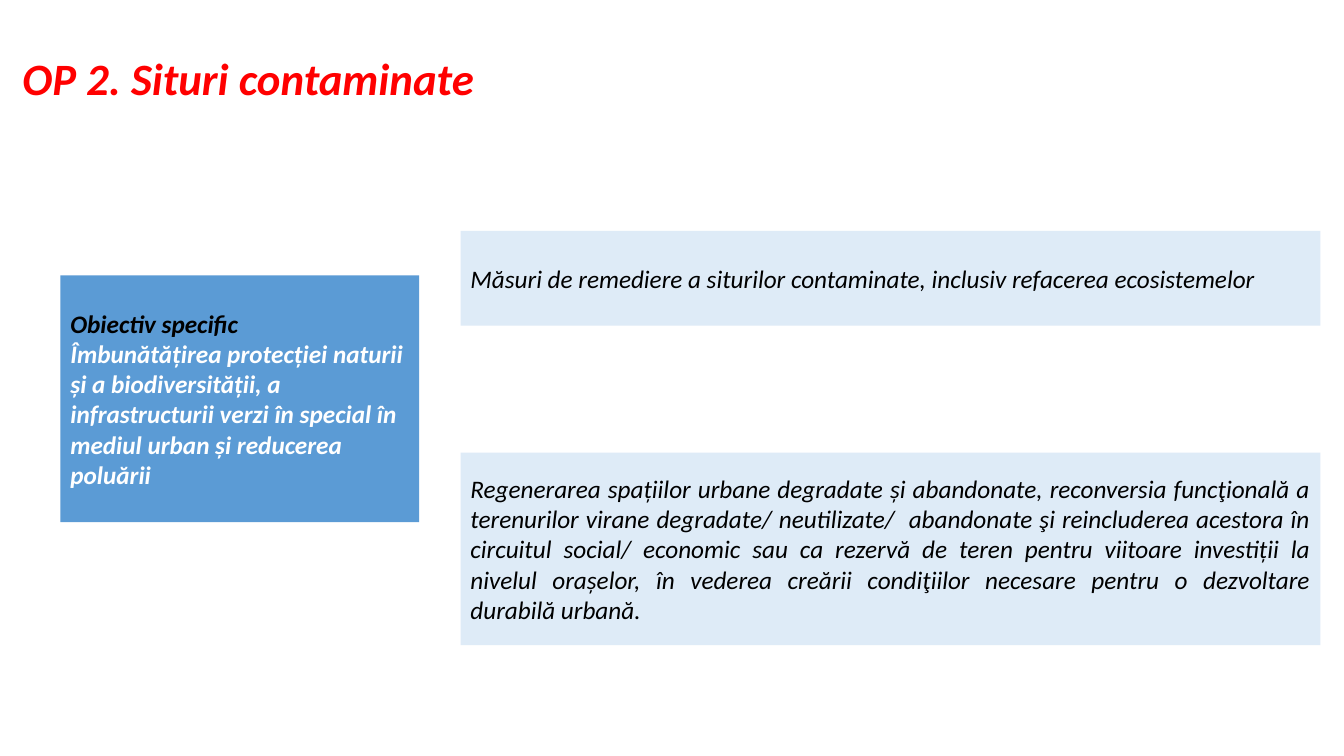
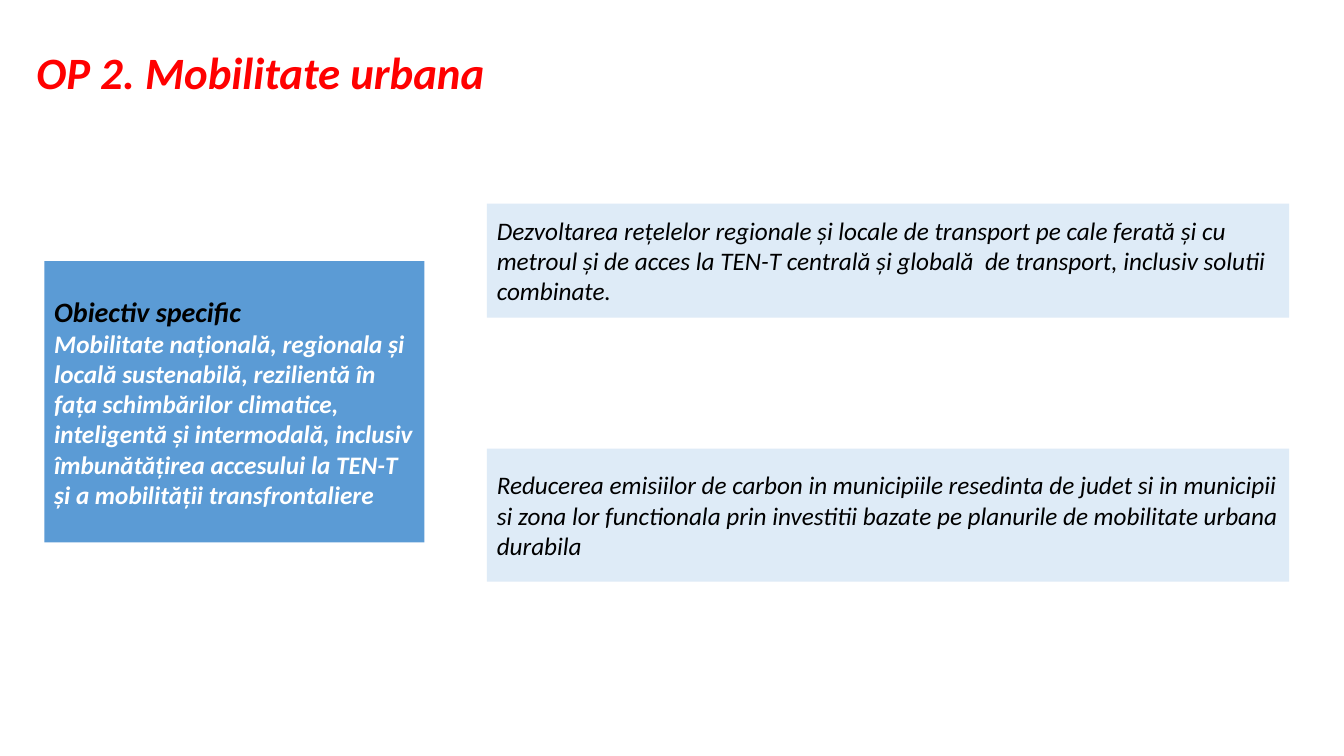
"""Build two slides that pair a specific objective with its measures."""
from pptx import Presentation
from pptx.dml.color import RGBColor
from pptx.enum.shapes import MSO_SHAPE
from pptx.enum.text import MSO_ANCHOR, PP_ALIGN
from pptx.util import Pt

RECT = MSO_SHAPE.RECTANGLE
TOP, MIDDLE = MSO_ANCHOR.TOP, MSO_ANCHOR.MIDDLE
LEFT, JUSTIFY = PP_ALIGN.LEFT, PP_ALIGN.JUSTIFY
FONT = "Calibri"
INSET = 7.2
COLORS = {"title": "FF0000", "goal": "5B9BD5", "measure": "DEEBF7",
          "dark": "000000", "light": "FFFFFF"}


def color(name):
    return RGBColor.from_string(COLORS[name])


def write(para, text, size=18, ink="dark", bold=False, align=LEFT, space=1.0):
    para.alignment = align
    para.line_spacing = space
    run = para.add_run()
    run.text = text
    font = run.font
    font.name, font.size = FONT, Pt(size)
    font.bold, font.italic = bold, True
    font.color.rgb = color(ink)


def set_frame(shape, inset, anchor):
    frame = shape.text_frame
    frame.word_wrap = True
    frame.vertical_anchor = anchor
    frame.margin_left = frame.margin_right = Pt(inset)
    frame.margin_top = frame.margin_bottom = Pt(inset)
    return frame


def add_title(slide, text, left, top):
    box = slide.shapes.add_textbox(Pt(left), Pt(top), Pt(920), Pt(63.4))
    frame = set_frame(box, 0, TOP)
    write(frame.paragraphs[0], text, size=32, ink="title", bold=True, space=0.9)


def add_panel(slide, area, fill):
    panel = slide.shapes.add_shape(RECT, *map(Pt, area))
    panel.shadow.inherit = False
    panel.fill.solid()
    panel.fill.fore_color.rgb = color(fill)
    panel.line.fill.background()
    return set_frame(panel, INSET, MIDDLE)


def add_goal(slide, area, text, size):
    frame = add_panel(slide, area, "goal")
    write(frame.paragraphs[0], "Obiectiv specific", size=size, bold=True)
    write(frame.add_paragraph(), text, ink="light", bold=True)


def add_measures(slide, left, width, rows, align):
    for top, height, text in rows:
        frame = add_panel(slide, (left, top, width, height), "measure")
        write(frame.paragraphs[0], text, align=align)


def add_sites(slide):
    add_title(slide, "OP 2. Situri contaminate", 16, 40.3)
    add_goal(slide, (43.2, 196.6, 256.3, 176.4),
             "Îmbunătățirea protecției naturii și a biodiversității, a "
             "infrastructurii verzi în special în mediul urban și reducerea "
             "poluării", 18)
    add_measures(slide, 329, 614.2, [
        (165, 67.7, "Măsuri de remediere a siturilor contaminate, inclusiv "
         "refacerea ecosistemelor"),
        (323.3, 137.5, "Regenerarea spațiilor urbane degradate și abandonate, "
         "reconversia funcţională a terenurilor virane degradate/ "
         "neutilizate/  abandonate şi reincluderea acestora în circuitul "
         "social/ economic sau ca rezervă de teren pentru viitoare investiții "
         "la nivelul orașelor, în vederea creării condiţiilor necesare pentru "
         "o dezvoltare durabilă urbană."),
    ], JUSTIFY)


def add_transit(slide):
    add_title(slide, "OP 2. Mobilitate urbana", 26, 36)
    add_goal(slide, (31.7, 186.5, 271.5, 201),
             "Mobilitate națională, regionala și locală sustenabilă, "
             "rezilientă în fața schimbărilor climatice, inteligentă și "
             "intermodală, inclusiv îmbunătățirea accesului la TEN-T și a "
             "mobilității transfrontaliere", 20)
    add_measures(slide, 347.8, 573, [
        (145.5, 81.4, "Dezvoltarea rețelelor regionale și locale de transport "
         "pe cale ferată și cu metroul și de acces la TEN-T centrală și "
         "globală  de transport, inclusiv solutii combinate."),
        (320.4, 95, "Reducerea emisiilor de carbon in municipiile resedinta "
         "de judet si in municipii si zona lor functionala prin investitii "
         "bazate pe planurile de mobilitate urbana durabila"),
    ], LEFT)


def main():
    deck = Presentation()
    deck.slide_width, deck.slide_height = Pt(960), Pt(540)
    blank = deck.slide_layouts[6]
    for build in (add_sites, add_transit):
        build(deck.slides.add_slide(blank))
    deck.save("out.pptx")


if __name__ == "__main__":
    main()
